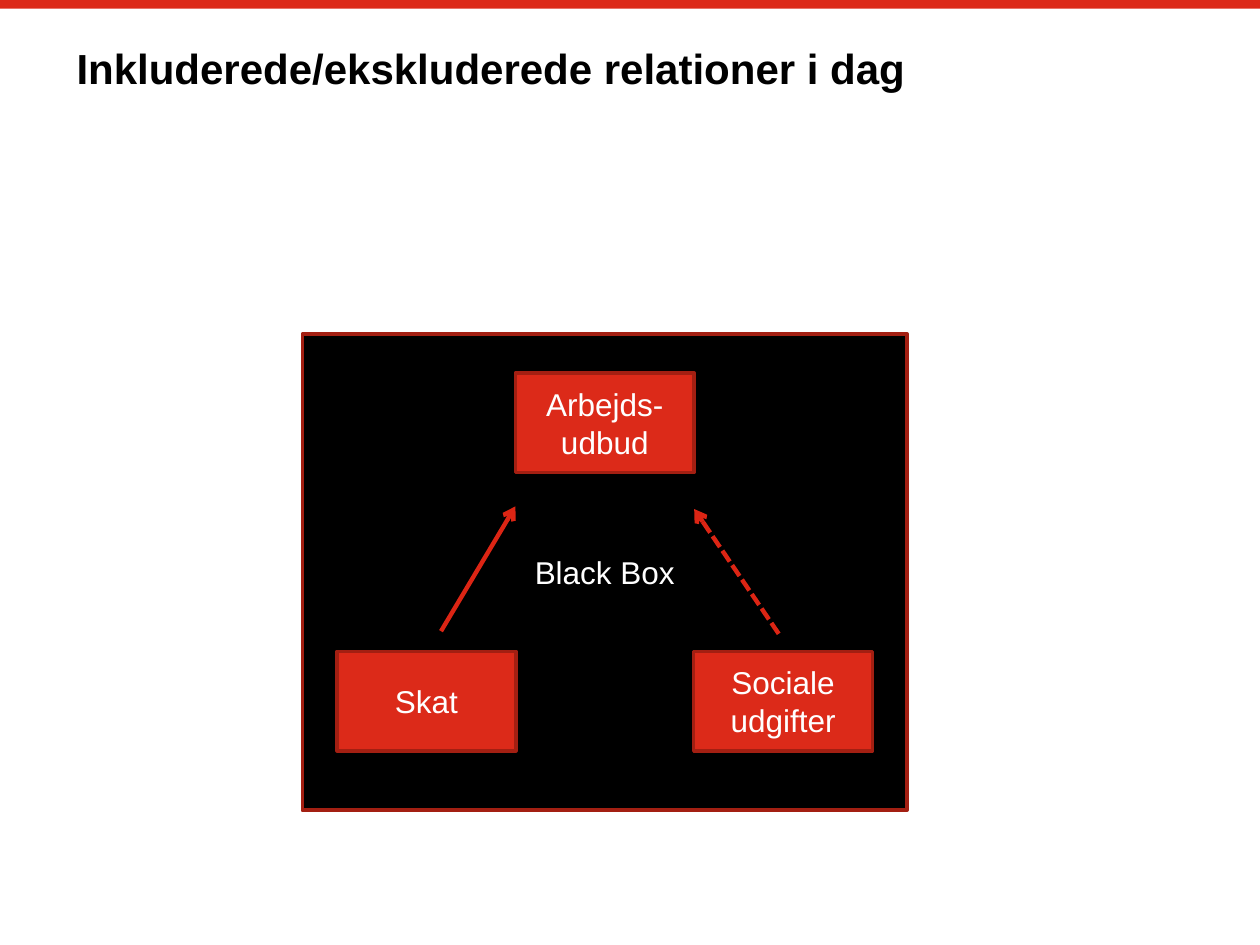
"""Build the slide on included and excluded relations around a black box."""
from lxml import etree
from pptx import Presentation
from pptx.dml.color import RGBColor
from pptx.enum.dml import MSO_LINE
from pptx.enum.shapes import MSO_CONNECTOR, MSO_SHAPE
from pptx.enum.text import MSO_ANCHOR, PP_ALIGN
from pptx.oxml.ns import qn
from pptx.util import Pt

RECT = MSO_SHAPE.RECTANGLE
STRAIGHT = MSO_CONNECTOR.STRAIGHT
MIDDLE = MSO_ANCHOR.MIDDLE
CENTER = PP_ALIGN.CENTER
SOLID, DASHED = MSO_LINE.SOLID, MSO_LINE.SQUARE_DOT

RED = RGBColor(0xDC, 0x2A, 0x19)
DARK_RED = RGBColor(0xA3, 0x1F, 0x12)
ARROW_RED = RGBColor(0xDC, 0x25, 0x14)
BLACK = RGBColor(0, 0, 0)
WHITE = RGBColor(0xFF, 0xFF, 0xFF)
FONT = "Arial"

TITLE = "Inkluderede/ekskluderede relationer i dag"
BLACK_BOX = ("Black Box", 172.8, 190.8, 345.6, 272.2)
NODE_W, NODE_H, NODE_STEP = 102.2, 56.9, 101.9
NODES = [
    ("Skat", -1, 372.2),
    ("Arbejds-udbud", 0, 213.1),
    ("Sociale udgifter", 1, 372.2),
]
ARROWS = [
    ((252, 360.7), (294.5, 289.4), SOLID),
    ((445, 362.2), (396.7, 290.9), DASHED),
]


def set_text(sp, text, size, color, bold=False):
    tf = sp.text_frame
    tf.word_wrap = True
    p = tf.paragraphs[0]
    p.text = text
    p.font.name, p.font.size, p.font.bold = FONT, Pt(size), bold
    p.font.color.rgb = color
    return tf


def add_box(s, left, top, width, height, fill):
    sp = s.shapes.add_shape(RECT, Pt(left), Pt(top), Pt(width), Pt(height))
    sp.shadow.inherit = False
    sp.fill.solid()
    sp.fill.fore_color.rgb = fill
    sp.line.fill.background()
    return sp


def add_labelled_box(s, text, left, top, width, height, fill):
    sp = add_box(s, left, top, width, height, fill)
    sp.line.color.rgb = DARK_RED
    sp.line.width = Pt(2)
    tf = set_text(sp, text, 18, WHITE)
    tf.vertical_anchor = MIDDLE
    tf.paragraphs[0].alignment = CENTER


def add_arrow(s, start, end, dash):
    cx = s.shapes.add_connector(STRAIGHT, *map(Pt, start + end))
    cx.line.color.rgb = ARROW_RED
    cx.line.width = Pt(2.5)
    cx.line.dash_style = dash
    ln = cx.line._get_or_add_ln()
    etree.SubElement(ln, qn("a:tailEnd"), type="arrow")
    etree.SubElement(cx._element.spPr, qn("a:effectLst"))


def main():
    prs = Presentation()
    prs.slide_width, prs.slide_height = Pt(720), Pt(540)
    s = prs.slides.add_slide(prs.slide_layouts[6])

    add_box(s, 0, 0, 720, 5, RED)
    add_labelled_box(s, *BLACK_BOX, BLACK)
    _, box_left, _, box_width, _ = BLACK_BOX
    first = box_left + (box_width - NODE_W) / 2
    for text, column, top in NODES:
        left = first + column * NODE_STEP
        add_labelled_box(s, text, left, top, NODE_W, NODE_H, RED)
    for start, end, dash in ARROWS:
        add_arrow(s, start, end, dash)

    title = s.shapes.add_textbox(Pt(36.7), Pt(20.9), Pt(648), Pt(79.2))
    set_text(title, TITLE, 24, BLACK, bold=True)
    prs.save("out.pptx")


if __name__ == "__main__":
    main()
